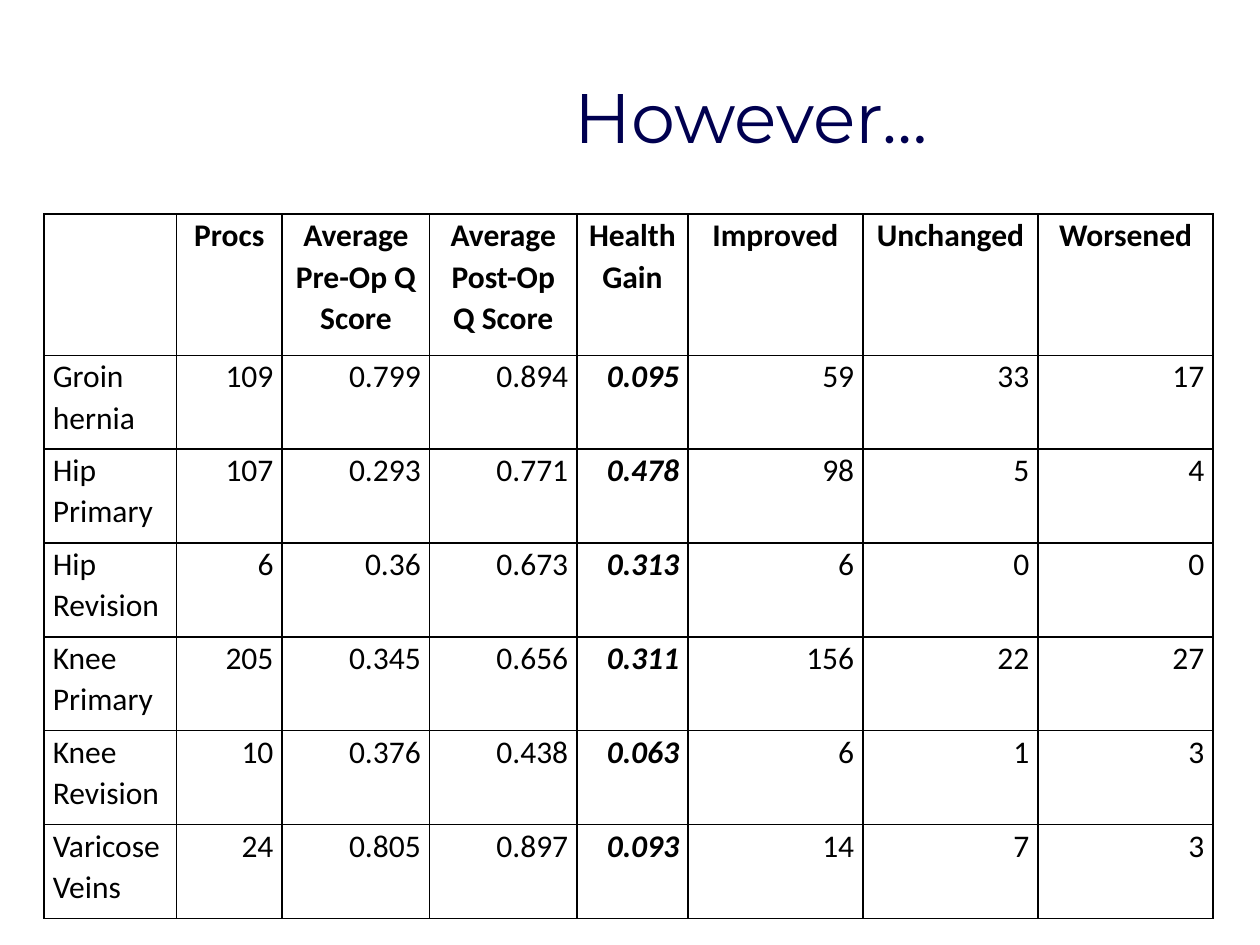
from dataclasses import dataclass

from lxml import etree
from pptx import Presentation
from pptx.dml.color import RGBColor
from pptx.enum.text import MSO_ANCHOR, PP_ALIGN
from pptx.oxml.ns import qn
from pptx.util import Inches, Pt

LEFT, CENTER, RIGHT = PP_ALIGN.LEFT, PP_ALIGN.CENTER, PP_ALIGN.RIGHT
TOP, MIDDLE = MSO_ANCHOR.TOP, MSO_ANCHOR.MIDDLE


@dataclass(frozen=True)
class Theme:
    navy: str = "000050"
    black: str = "000000"
    head_font: str = "Montserrat"
    body_font: str = "Calibri"
    head_size: int = 40
    body_size: int = 18
    rule: int = 1


THEME = Theme()

HEADS = ["", "Procs", "Average Pre-Op Q Score", "Average Post-Op Q Score",
         "Health Gain", "Improved", "Unchanged", "Worsened"]
SCORES = [
    ["Groin hernia", "109", "0.799", "0.894", "0.095", "59", "33", "17"],
    ["Hip Primary", "107", "0.293", "0.771", "0.478", "98", "5", "4"],
    ["Hip Revision", "6", "0.36", "0.673", "0.313", "6", "0", "0"],
    ["Knee Primary", "205", "0.345", "0.656", "0.311", "156", "22", "27"],
    ["Knee Revision", "10", "0.376", "0.438", "0.063", "6", "1", "3"],
    ["Varicose Veins", "24", "0.805", "0.897", "0.093", "14", "7", "3"],
]
GAIN = HEADS.index("Health Gain")
WIDTHS = [1.05, 0.84, 1.17, 1.17, 0.88, 1.39, 1.39, 1.39]
HEAD_ROW = 1.12


def style(font, name, size, color):
    font.name = name
    font.size = Pt(size)
    font.color.rgb = RGBColor.from_string(color)


def add_title(slide, text, box):
    title = slide.shapes.title
    title.left, title.top, title.width, title.height = map(Inches, box)
    frame = title.text_frame
    frame.text = text
    frame.vertical_anchor = MIDDLE
    para = frame.paragraphs[0]
    para.alignment = CENTER
    style(para.runs[0].font, THEME.head_font, THEME.head_size, THEME.navy)


def add_rules(cell):
    """Draw a thin line on all four sides of a cell."""
    props = cell._tc.get_or_add_tcPr()
    for spot, side in enumerate(("lnL", "lnR", "lnT", "lnB")):
        line = etree.Element(qn(f"a:{side}"), w=str(Pt(THEME.rule)))
        fill = etree.SubElement(line, qn("a:solidFill"))
        etree.SubElement(fill, qn("a:srgbClr"), val=THEME.black)
        props.insert(spot, line)


def fill_cell(cell, text, align, bold, italic):
    cell.fill.background()
    add_rules(cell)
    cell.margin_left = cell.margin_right = Inches(0.07)
    cell.margin_top = cell.margin_bottom = 0
    cell.vertical_anchor = TOP
    if not text:
        return
    cell.text_frame.text = text
    para = cell.text_frame.paragraphs[0]
    para.alignment = align
    para.line_spacing = 1.07
    font = para.runs[0].font
    style(font, THEME.body_font, THEME.body_size, THEME.black)
    font.bold, font.italic = bold, italic


def add_scores(slide, box):
    rows = [HEADS] + SCORES
    table = slide.shapes.add_table(len(rows), len(HEADS), *map(Inches, box)).table
    table.first_row = table.horz_banding = False
    for col, width in zip(table.columns, WIDTHS):
        col.width = Inches(width)
    step = (box[3] - HEAD_ROW) / len(SCORES)
    for r, texts in enumerate(rows):
        head = r == 0
        table.rows[r].height = Inches(HEAD_ROW if head else step)
        for c, text in enumerate(texts):
            align = CENTER if head else LEFT if c == 0 else RIGHT
            gain = c == GAIN and not head
            fill_cell(table.cell(r, c), text, align, head or gain, gain)


def main():
    deck = Presentation()
    deck.slide_width, deck.slide_height = Inches(10), Inches(7.5)
    slide = deck.slides.add_slide(deck.slide_layouts[5])
    add_title(slide, "However…", (1.93, 0.29, 8.07, 1.25))
    add_scores(slide, (0.35, 1.7, 9.29, 5.59))
    deck.save("out.pptx")


if __name__ == "__main__":
    main()
